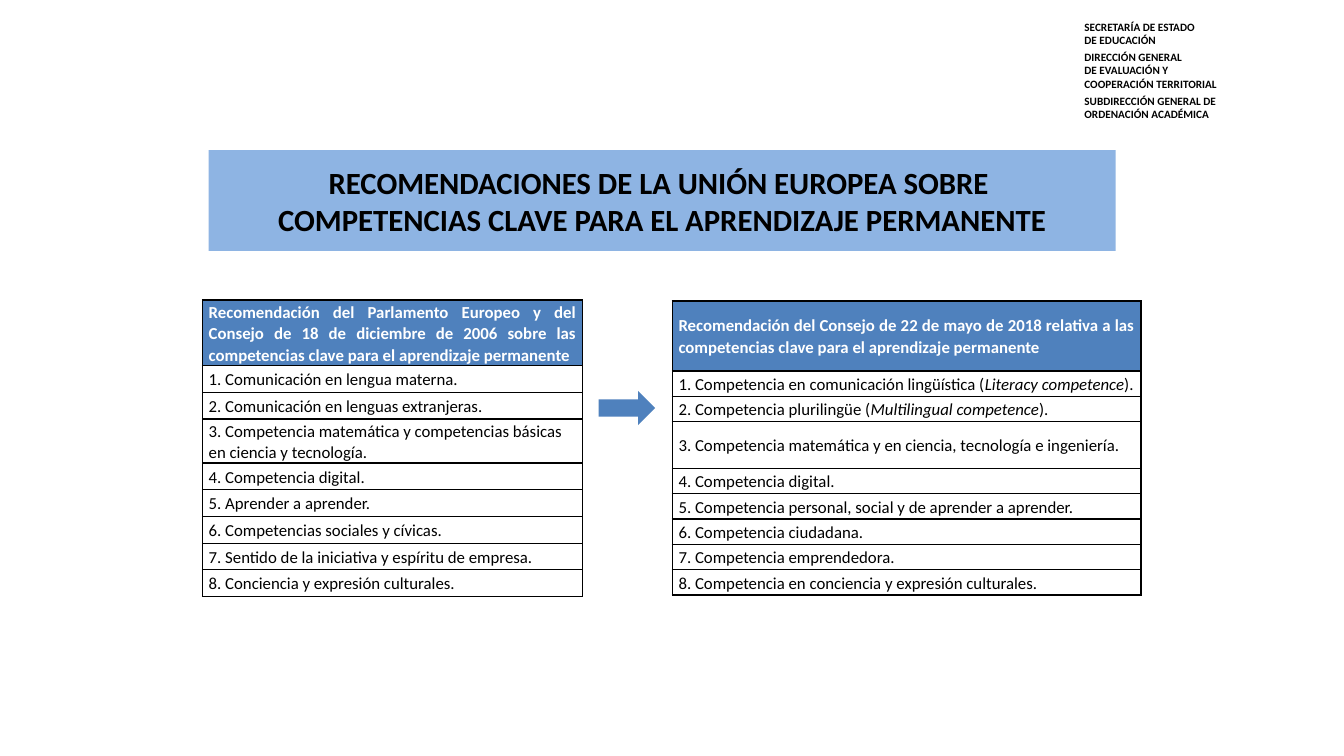
"""Builds the slide comparing the 2006 and 2018 key competence recommendations."""
from lxml.etree import SubElement
from pptx import Presentation
from pptx.dml.color import RGBColor
from pptx.enum.shapes import MSO_SHAPE
from pptx.enum.text import MSO_ANCHOR, PP_ALIGN
from pptx.oxml.ns import qn
from pptx.util import Pt

HUES = {"ink": "000000", "white": "FFFFFF", "blue": "4F81BD", "pale": "8EB4E3"}
EDGE = {"margin_left": Pt(4.5), "margin_right": Pt(4.5), "margin_top": Pt(0.5),
        "margin_bottom": Pt(0), "vertical_anchor": MSO_ANCHOR.MIDDLE}
FLOW = {"line_spacing": 1.07, "space_after": Pt(8)}
HEAD = {"name": "Calibri", "size": Pt(12), "bold": True}
BODY = {**HEAD, "bold": False}
TITLE = {**HEAD, "size": Pt(22)}
SMALL = {**HEAD, "size": Pt(8)}


def apply(item, values):
    for name, value in values.items():
        setattr(item, name, value)


def write(para, text, style, hue):
    for turn, part in enumerate(text.split("*")):
        run = para.add_run()
        run.text = part
        apply(run.font, {**style, "italic": turn % 2 == 1})
        run.font.color.rgb = RGBColor.from_string(HUES[hue])


deck = Presentation()
apply(deck, {"slide_width": Pt(960), "slide_height": Pt(540)})
slide = deck.slides.add_slide(deck.slide_layouts[6])

office = slide.shapes.add_textbox(Pt(767.5), Pt(10.8), Pt(147), Pt(80)).text_frame
office.word_wrap = True
units = [
    ["SECRETARÍA DE ESTADO", "DE EDUCACIÓN"],
    ["DIRECCIÓN GENERAL", "DE EVALUACIÓN Y", "COOPERACIÓN TERRITORIAL"],
    ["SUBDIRECCIÓN GENERAL DE ORDENACIÓN ACADÉMICA"],
]
for rank, unit in enumerate(units):
    for step, line in enumerate(unit):
        first = rank == 0 and step == 0
        para = office.paragraphs[0] if first else office.add_paragraph()
        if rank and step == 0:
            para.space_before = Pt(2.4)
        write(para, line, SMALL, "ink")

lists = [
    (144.6, 214.3, 271.5, 46.8, 19.1, 31.5, [
        "Recomendación del Parlamento Europeo y del Consejo de 18 de diciembre de 2006 "
        "sobre las competencias clave para el aprendizaje permanente",
        "1. Comunicación en lengua materna.",
        "2. Comunicación en lenguas extranjeras.",
        "3. Competencia matemática y competencias básicas en ciencia y tecnología.",
        "4. Competencia digital.",
        "5. Aprender a aprender.",
        "6. Competencias sociales y cívicas.",
        "7. Sentido de la iniciativa y espíritu de empresa.",
        "8. Conciencia y expresión culturales.",
    ]),
    (480.2, 215, 334.8, 50, 18.1, 33.4, [
        "Recomendación del Consejo de 22 de mayo de 2018 relativa a las competencias "
        "clave para el aprendizaje permanente",
        "1. Competencia en comunicación lingüística (*Literacy competence*).",
        "2. Competencia plurilingüe (*Multilingual competence*).",
        "3. Competencia matemática y en ciencia, tecnología e ingeniería.",
        "4. Competencia digital.",
        "5. Competencia personal, social y de aprender a aprender.",
        "6. Competencia ciudadana.",
        "7. Competencia emprendedora.",
        "8. Competencia en conciencia y expresión culturales.",
    ]),
]
for left, top, width, head, base, tall, lines in lists:
    highs = [head] + [base] * 2 + [tall] + [base] * 5
    frame = slide.shapes.add_table(len(lines), 1, Pt(left), Pt(top), Pt(width), Pt(sum(highs)))
    table = frame.table
    for rank, (line, high) in enumerate(zip(lines, highs)):
        table.rows[rank].height = Pt(high)
        cell = table.cell(rank, 0)
        apply(cell, EDGE)
        props = cell._tc.get_or_add_tcPr()
        for side in ("lnL", "lnR", "lnT", "lnB"):
            rule = SubElement(props, qn("a:" + side), w=str(Pt(1)))
            fill = SubElement(rule, qn("a:solidFill"))
            SubElement(fill, qn("a:srgbClr"), val=HUES["ink"])
        para = cell.text_frame.paragraphs[0]
        apply(para, FLOW)
        if rank == 0:
            cell.fill.solid()
            cell.fill.fore_color.rgb = RGBColor.from_string(HUES["blue"])
            para.alignment = PP_ALIGN.JUSTIFY
            write(para, line, HEAD, "white")
        else:
            cell.fill.background()
            write(para, line, BODY, "ink")

blocks = [
    (MSO_SHAPE.RIGHT_ARROW, 427.7, 279.2, 40.3, 24.5, "blue", ""),
    (MSO_SHAPE.RECTANGLE, 149, 107.3, 648, 72, "pale",
     "RECOMENDACIONES DE LA UNIÓN EUROPEA SOBRE \v"
     "COMPETENCIAS CLAVE PARA EL APRENDIZAJE PERMANENTE"),
]
for kind, left, top, width, high, hue, text in blocks:
    shape = slide.shapes.add_shape(kind, Pt(left), Pt(top), Pt(width), Pt(high))
    shape.shadow.inherit = False
    shape.fill.solid()
    shape.fill.fore_color.rgb = RGBColor.from_string(HUES[hue])
    shape.line.fill.background()
    if text:
        apply(shape.text_frame, {"word_wrap": True, "vertical_anchor": MSO_ANCHOR.MIDDLE})
        para = shape.text_frame.paragraphs[0]
        para.alignment = PP_ALIGN.CENTER
        for turn, line in enumerate(text.split("\v")):
            if turn:
                para.add_line_break()
            write(para, line, TITLE, "ink")

deck.save("out.pptx")
